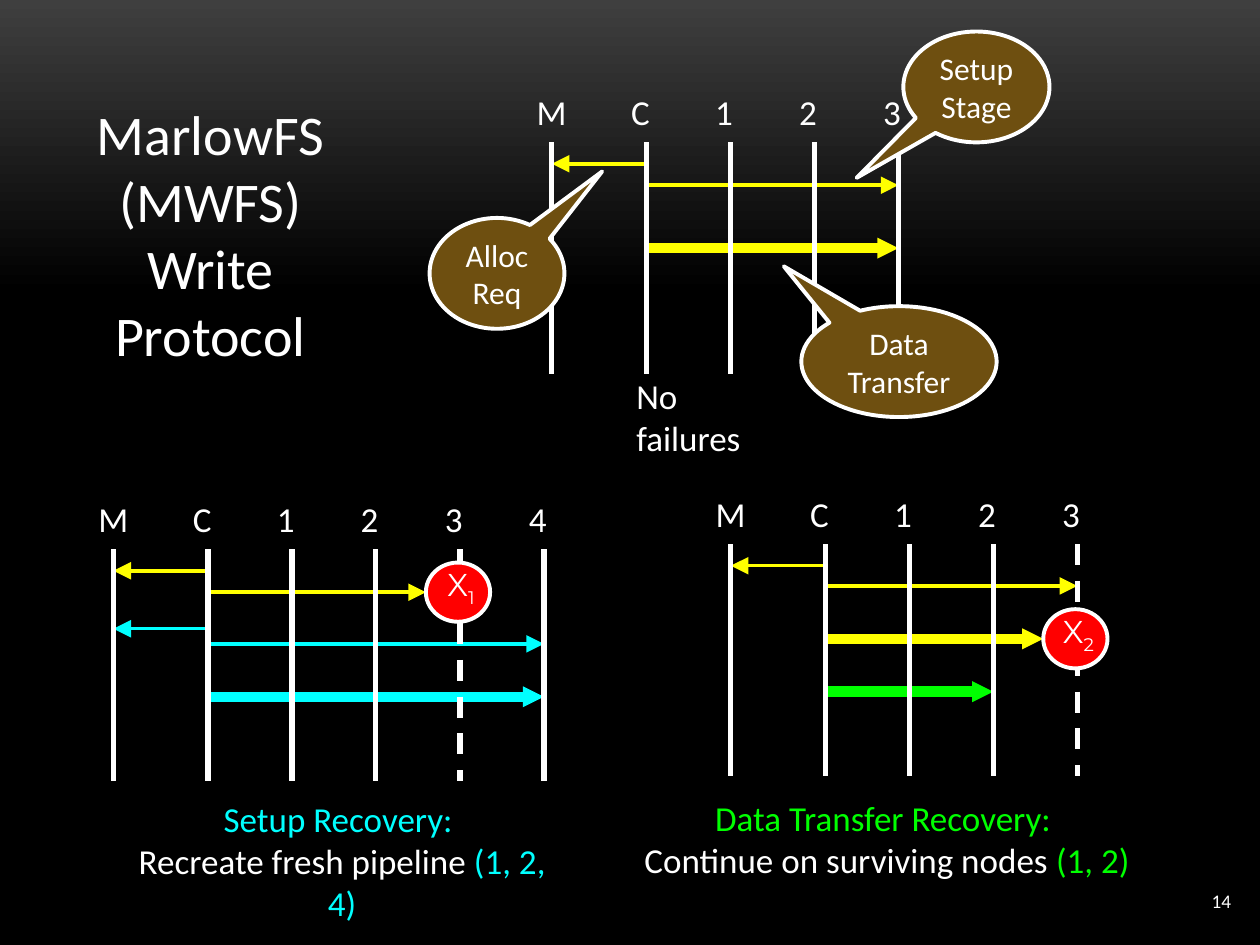
import pptx
import pptx.dml.color
import pptx.enum.dml
import pptx.enum.shapes
import pptx.enum.text
import pptx.oxml.ns
import pptx.util
from lxml import etree
from pptx.util import Inches

RGBColor = pptx.dml.color.RGBColor
Align = pptx.enum.text.PP_ALIGN
Anchor = pptx.enum.text.MSO_ANCHOR
Shape = pptx.enum.shapes.MSO_SHAPE

WHITE = RGBColor(0xFF, 0xFF, 0xFF)
BLACK = RGBColor(0, 0, 0)
CHARCOAL = RGBColor(0x3F, 0x3F, 0x3F)
YELLOW = RGBColor(0xFF, 0xFF, 0)
CYAN = RGBColor(0, 0xFF, 0xFF)
GREEN = RGBColor(0, 0xFF, 0)
RED = RGBColor(0xFF, 0, 0)
BROWN = RGBColor(0x6E, 0x4F, 0x10)

THIN, THICK = 2, 6
HEAD_SIZES = {THIN: "lg", THICK: "sm"}
LIFELINE_HEIGHT = 1.84
BADGE_WIDTH, BADGE_HEIGHT = 0.51, 0.47
BADGE_OFFSET = 0.27


def lane_offset(lane):
    """Distance of a lifeline from the master's: M, then C, then the nodes."""
    return 0 if lane == "M" else 0.75 + "C1234".index(lane) * 2 / 3


def write(frame, paragraphs, size, align=Align.LEFT, font="Calibri"):
    """Fill a frame with paragraphs, each a list of (text, colour) runs."""
    for index, runs in enumerate(paragraphs):
        para = frame.paragraphs[0] if index == 0 else frame.add_paragraph()
        para.alignment = align
        for text, color in runs:
            span = para.add_run()
            span.text = text
            span.font.name = font
            span.font.size = pptx.util.Pt(size)
            span.font.color.rgb = color


def set_insets(frame, left, top, right, bottom):
    frame.margin_left, frame.margin_top = Inches(left), Inches(top)
    frame.margin_right, frame.margin_bottom = Inches(right), Inches(bottom)


def add_text(slide, at, paragraphs, size=20, align=Align.LEFT, font="Calibri",
             anchor=Anchor.TOP, insets=(0.04, 0, 0.04, 0)):
    frame = slide.shapes.add_textbox(*map(Inches, at)).text_frame
    frame.word_wrap = True
    frame.vertical_anchor = anchor
    set_insets(frame, *insets)
    write(frame, paragraphs, size, align, font)
    return frame


def add_line(slide, start, end, color, width, arrow=False, dashed=False):
    line = slide.shapes.add_connector(
        pptx.enum.shapes.MSO_CONNECTOR.STRAIGHT,
        *map(Inches, start + end))
    line.line.color.rgb = color
    line.line.width = pptx.util.Pt(width)
    if dashed:
        line.line.dash_style = pptx.enum.dml.MSO_LINE.DASH
    if arrow:
        outline = line.line._get_or_add_ln()
        size = HEAD_SIZES[width]
        etree.SubElement(outline, pptx.oxml.ns.qn("a:tailEnd"),
                         type="triangle", w=size, len=size)
    etree.SubElement(line._element.spPr, pptx.oxml.ns.qn("a:effectLst"))


def add_outlined(slide, kind, at, fill):
    shape = slide.shapes.add_shape(kind, *map(Inches, at))
    shape.shadow.inherit = False
    shape.fill.solid()
    shape.fill.fore_color.rgb = fill
    shape.line.color.rgb = WHITE
    shape.line.width = pptx.util.Pt(2.25)
    return shape


def add_callout(slide, at, pointer, lines):
    callout = add_outlined(slide, Shape.OVAL_CALLOUT, at, BROWN)
    callout.adjustments[0], callout.adjustments[1] = pointer
    callout.text_frame.word_wrap = True
    callout.text_frame.vertical_anchor = Anchor.MIDDLE
    write(callout.text_frame, [[(line, WHITE)] for line in lines], 18, Align.CENTER)


def add_failure(slide, x, y, number):
    """Badge centred on a lifeline where a node fails."""
    left, top = x - BADGE_OFFSET, y - BADGE_HEIGHT / 2
    add_outlined(slide, Shape.OVAL, (left, top, BADGE_WIDTH, BADGE_HEIGHT), RED)
    frame = add_text(slide, (left + 0.03, top + 0.04, 0.5, 0.3),
                     [[("X", WHITE), (number, WHITE)]], 18, Align.CENTER,
                     "Montserrat", Anchor.MIDDLE, (0.1, 0, 0.1, 0))
    subscript = frame.paragraphs[0].runs[1].font
    subscript._element.set("baseline", "-25000")


def add_sequence(slide, left, top, lanes, messages, failed_lane=None, failure=None):
    """Draw lifelines and C's messages: (target lane, drop, colour, width).

    failure is (message index, badge number); that message stops at the badge.
    """
    source = left + lane_offset("C")
    for index, (target, drop, color, width) in enumerate(messages):
        end = left + lane_offset(target)
        if failure and index == failure[0]:
            end -= BADGE_OFFSET
        add_line(slide, (source, top + drop), (end, top + drop), color, width, arrow=True)
    for lane in lanes:
        x = left + lane_offset(lane)
        add_text(slide, (x - 0.16, top - 0.41, 0.26, 0.34), [[(lane, WHITE)]])
        add_line(slide, (x, top), (x, top + LIFELINE_HEIGHT), WHITE, 3,
                 dashed=lane == failed_lane)
    if failure:
        drop = messages[failure[0]][1]
        add_failure(slide, left + lane_offset(failed_lane), top + drop, failure[1])


def add_recovery_caption(slide, at, heading, action, nodes, color):
    add_text(slide, at, [[(heading, color)], [(action, WHITE), (nodes, color)]],
             align=Align.CENTER)


def set_background(slide):
    fill = slide.background.fill
    fill.gradient()
    fill.gradient_angle = 270
    for stop, color, position in zip(fill.gradient_stops, (CHARCOAL, BLACK), (0, 0.31)):
        stop.color.rgb = color
        stop.position = position


def set_title(slide):
    title = slide.shapes.title
    title.left, title.top = Inches(0.13), Inches(0.91)
    title.width, title.height = Inches(3.08), Inches(1.89)
    frame = title.text_frame
    frame.auto_size = pptx.enum.text.MSO_AUTO_SIZE.NONE
    frame.word_wrap = True
    frame.vertical_anchor = Anchor.MIDDLE
    set_insets(frame, 0.1, 0, 0.1, 0)
    lines = ("MarlowFS (MWFS)", "Write", "Protocol")
    write(frame, [[(line, WHITE)] for line in lines], 32, Align.CENTER)


def main():
    deck = pptx.Presentation()
    deck.slide_width, deck.slide_height = Inches(10), Inches(7.5)
    slide = deck.slides.add_slide(deck.slide_layouts[5])
    set_background(slide)
    set_title(slide)

    add_sequence(slide, 4.38, 1.13, "MC123", [
        ("M", 0.17, YELLOW, THIN), ("3", 0.34, YELLOW, THIN),
        ("3", 0.84, YELLOW, THICK)])
    add_sequence(slide, 0.9, 4.36, "MC1234", [
        ("M", 0.17, YELLOW, THIN), ("3", 0.34, YELLOW, THIN),
        ("M", 0.63, CYAN, THIN), ("4", 0.75, CYAN, THIN),
        ("4", 1.17, CYAN, THICK)], "3", (1, "1"))
    add_sequence(slide, 5.8, 4.32, "MC123", [
        ("M", 0.17, YELLOW, THIN), ("3", 0.33, YELLOW, THIN),
        ("3", 0.75, YELLOW, THICK), ("2", 1.17, GREEN, THICK)], "3", (2, "2"))

    add_callout(slide, (3.41, 1.73, 1.07, 0.88), (0.78, -0.92), ["Alloc Req"])
    add_callout(slide, (7.17, 0.25, 1.16, 0.88), (-0.82, 0.82), ["Setup", "Stage"])
    add_callout(slide, (6.36, 2.43, 1.55, 0.88), (-0.59, -0.86), ["Data", "Transfer"])

    add_text(slide, (5.01, 2.97, 1.25, 0.34), [[("No failures", WHITE)]])
    add_recovery_caption(slide, (0.94, 6.33, 3.55, 0.67), "Setup Recovery: ",
                         "Recreate fresh pipeline", " (1, 2, 4)", CYAN)
    add_recovery_caption(slide, (5.06, 6.32, 3.96, 0.67), "Data Transfer Recovery: ",
                         "Continue on surviving nodes", " (1, 2)", GREEN)
    add_text(slide, (8.79, 6.95, 1.08, 0.4), [[("14", WHITE)]], 11, Align.RIGHT,
             anchor=Anchor.MIDDLE, insets=(0.1, 0.05, 0.1, 0.05))
    deck.save("out.pptx")


if __name__ == "__main__":
    main()
